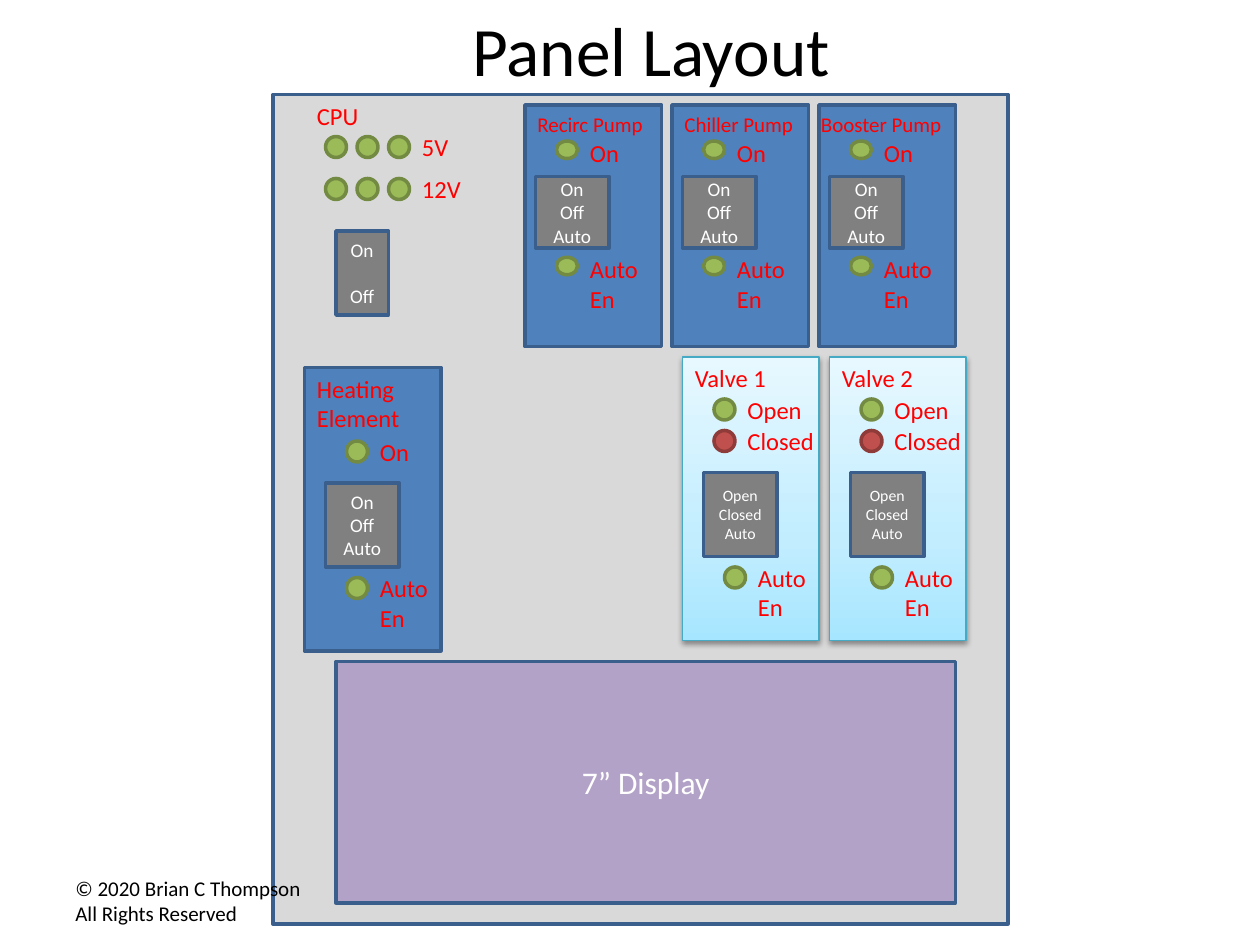
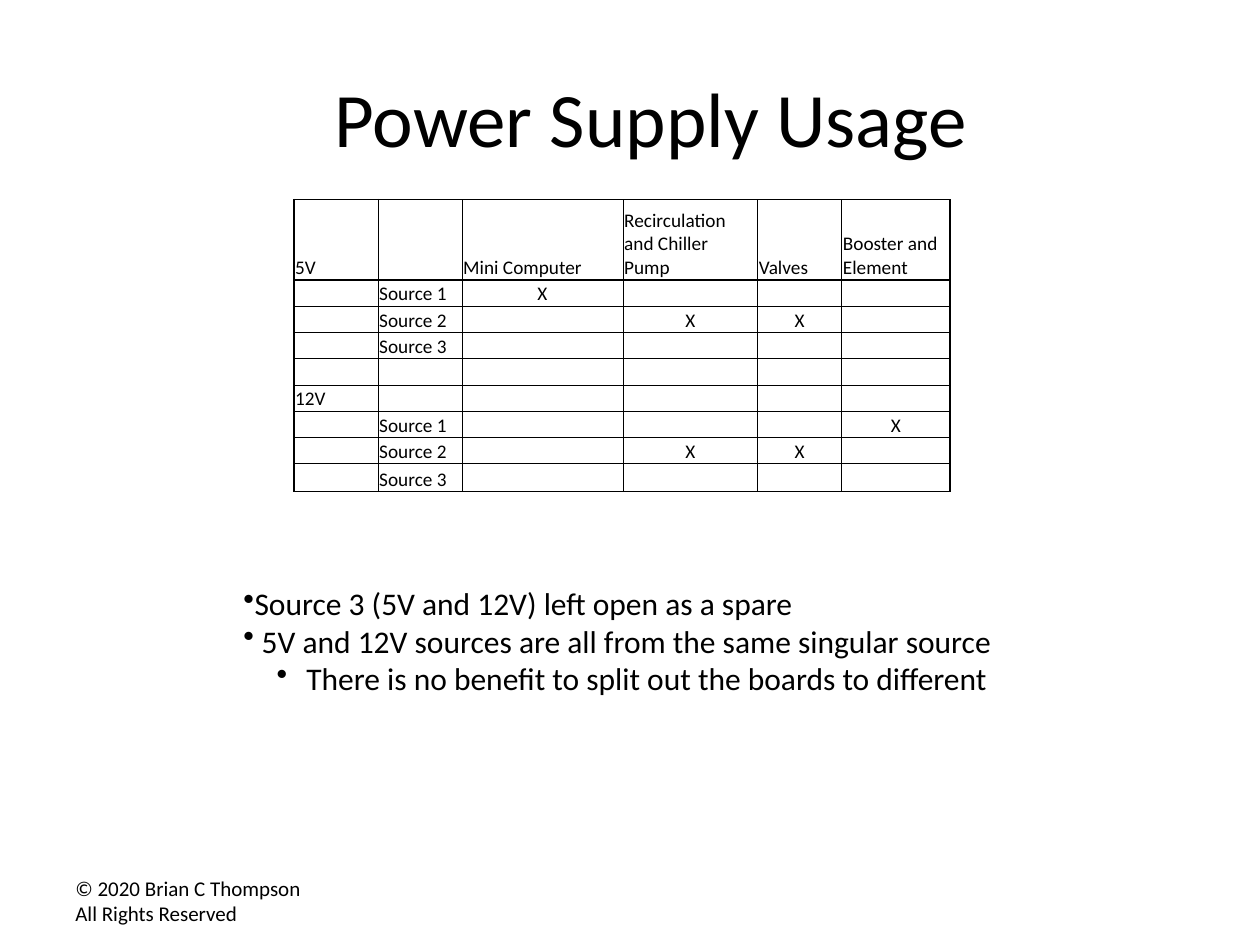
from copy import deepcopy

from pptx import Presentation
from pptx import util as u
from pptx.dml.color import RGBColor
from pptx.enum import shapes, text
from pptx.oxml import parse_xml
from pptx.oxml.ns import nsdecls, qn

Pt = u.Pt
rgb = RGBColor.from_string
RECT, OVAL = shapes.MSO_SHAPE.RECTANGLE, shapes.MSO_SHAPE.OVAL
LEFT, CENTER = text.PP_ALIGN.LEFT, text.PP_ALIGN.CENTER
TOP, MIDDLE = text.MSO_ANCHOR.TOP, text.MSO_ANCHOR.MIDDLE
FONT = "Calibri"
BLACK, WHITE, RED_TEXT = "000000", "FFFFFF", "FF0000"
BLUE, NAVY, GREY, PANEL, PURPLE = "4F81BD", "3A5F8C", "808080", "D9D9D9", "B3A2C7"
GREEN_LED, RED_LED = ("9BBB59", "738A42"), ("C0504D", "8E3B39")
GLASS = [("A7E6FF", 0), ("C1EDFF", 0.35), ("E7F8FF", 1)]
GLASS_EDGE = "46AAC5"


def write(parent, at, lines, size=14, color=RED_TEXT, align=LEFT, anchor=TOP, sp=None):
    """Put lines in the given shape, or in a new text box at the given place."""
    if sp is None:
        sp = parent.add_textbox(*map(Pt, at))
    tf = sp.text_frame
    tf.word_wrap = True
    tf.vertical_anchor = anchor
    tf.text = "\n".join(lines)
    for p in tf.paragraphs:
        p.alignment = align
        for r in p.runs:
            r.font.name, r.font.size = FONT, Pt(size)
            r.font.color.rgb = rgb(color)
    return sp


def draw(parent, kind, at, fill, line, lines=(), size=11):
    """Add a filled, outlined shape with optional centred white text."""
    sp = parent.add_shape(kind, *map(Pt, at))
    sp.shadow.inherit = False
    sp.fill.solid()
    sp.fill.fore_color.rgb = rgb(fill)
    sp.line.color.rgb = rgb(line)
    sp.line.width = Pt(2)
    if lines:
        write(parent, at, lines, size, WHITE, CENTER, MIDDLE, sp)
    return sp


prs = Presentation()
prs.slide_width, prs.slide_height = Pt(720), Pt(540)
slides = []
for title, top, height, size in [("Panel Layout", 0, 56, 39.6),
                                 ("Power Supply Usage", 21.6, 90, 44)]:
    s = prs.slides.add_slide(prs.slide_layouts[6])
    write(s.shapes, (90, top, 564, height), [title], size, BLACK, CENTER, MIDDLE)
    slides.append(s)

# Slide 1: enclosure
s = slides[0]
draw(s.shapes, RECT, (156, 54, 420, 474), PANEL, NAVY)

# Computer supply indicators and power switch
for row, volts in enumerate(["5V", "12V"]):
    for col in range(3):
        draw(s.shapes, OVAL, (186 + 18 * col, 78 + 24 * row, 12, 12), *GREEN_LED)
    write(s.shapes, (234, 72 + 24 * row, 48, 24), [volts])
write(s.shapes, (174, 54, 48, 24), ["CPU"])
power = draw(s.shapes, RECT, (192, 132, 30, 48), GREY, NAVY, ["On", "Off"])
power.text_frame.paragraphs[1].space_before = Pt(13.4)

# Control units; every place inside one is an offset from its top left corner
ON_OFF = ["On", "Off", "Auto"]
AUTO = ["Auto", "En"]
units = []
for i, name in enumerate(["Recirc Pump", "Chiller Pump", "Booster Pump"]):
    shift = 6 if name == "Booster Pump" else 0
    units.append(dict(
        at=(300 + 84 * i, 60, 78, 138), glass=False,
        switch=((6, 40.8, 42, 41), ON_OFF, 11),
        leds=[((18, 20.6, 12, 10), GREEN_LED), ((18, 87, 12, 10), GREEN_LED)],
        labels=[((-shift, 0, 78 + 2 * shift, 21.6), [name], 12),
                ((30, 15.3, 48, 21), ["On"], 14), ((30, 81.8, 48, 35), AUTO, 14)]))
for i, name in enumerate(["Valve 1", "Valve 2"]):
    units.append(dict(
        at=(390 + 84 * i, 204, 78, 162), glass=True,
        switch=((12, 66, 42, 48), ["Open", "Closed", "Auto"], 9),
        leds=[((18, 24, 12, 12), GREEN_LED), ((18, 42, 12, 12), RED_LED),
              ((24, 120, 12, 12), GREEN_LED)],
        labels=[((0, 0, 60, 24), [name], 14), ((30, 18, 48, 24), ["Open"], 14),
                ((30, 36, 54, 24), ["Closed"], 14), ((36, 114, 48, 41), AUTO, 14)]))
units.append(dict(
    at=(174, 210, 78, 162), glass=False,
    switch=((12, 66, 42, 48), ON_OFF, 11),
    leds=[((24, 42, 12, 12), GREEN_LED), ((24, 120, 12, 12), GREEN_LED)],
    labels=[((0, 0, 78, 41), ["Heating", "Element"], 14),
            ((36, 36, 48, 24), ["On"], 14), ((36, 114, 48, 41), AUTO, 14)]))

for unit in units:
    left, top = unit["at"][:2]
    group = s.shapes.add_group_shape().shapes
    sp = draw(group, RECT, unit["at"], BLUE, NAVY)
    if unit["glass"]:
        sp.fill.gradient()
        sp.fill.gradient_angle = 90
        stops = next(sp._element.iter(qn("a:gsLst")))
        stops.insert(1, deepcopy(stops[0]))
        for stop, (color, position) in zip(sp.fill.gradient_stops, GLASS):
            stop.color.rgb = rgb(color)
            stop.position = position
        sp.line.color.rgb = rgb(GLASS_EDGE)
        sp.line.width = Pt(0.75)
        next(sp._element.iter(qn("a:effectLst"))).append(parse_xml(
            f'<a:outerShdw {nsdecls("a")} blurRad="40000" dist="20000" dir="5400000" '
            'rotWithShape="0"><a:srgbClr val="000000"><a:alpha val="38000"/>'
            '</a:srgbClr></a:outerShdw>'))
    (x, y, w, h), words, size = unit["switch"]
    draw(group, RECT, (left + x, top + y, w, h), GREY, NAVY, words, size)
    for (x, y, w, h), colors in unit["leds"]:
        draw(group, OVAL, (left + x, top + y, w, h), *colors)
    for (x, y, w, h), words, size in unit["labels"]:
        write(group, (left + x, top + y, w, h), words, size)

draw(s.shapes, RECT, (192, 378, 354, 138), PURPLE, NAVY, ["7” Display"], 18)

# Slide 2: which source feeds which load
s = slides[1]
rows = [
    ["5V", "", "Mini Computer", "Recirculation and Chiller Pump", "Valves",
     "Booster and Element"],
    ["", "Source 1", "X", "", "", ""],
    ["", "Source 2", "", "X", "X", ""],
    ["", "Source 3", "", "", "", ""],
    ["", "", "", "", "", ""],
    ["12V", "", "", "", "", ""],
    ["", "Source 1", "", "", "", "X"],
    ["", "Source 2", "", "X", "X", ""],
    ["", "Source 3", "", "", "", ""],
]
widths = [48, 48, 92, 77, 48, 62]
heights = [46] + [15] * 7 + [16]
last_row, last_col = len(rows) - 1, len(widths) - 1
table = s.shapes.add_table(len(rows), len(widths), Pt(168), Pt(114),
                           Pt(sum(widths)), Pt(sum(heights))).table
table.first_row = table.horz_banding = False
for column, width in zip(table.columns, widths):
    column.width = Pt(width)
for i, (row, height) in enumerate(zip(rows, heights)):
    table.rows[i].height = Pt(height)
    for j, value in enumerate(row):
        cell = table.cell(i, j)
        cell.margin_left = cell.margin_right = cell.margin_top = Pt(0.7)
        cell.margin_bottom = 0
        cell.vertical_anchor = text.MSO_ANCHOR.BOTTOM
        cell.text = value
        p = cell.text_frame.paragraphs[0]
        p.alignment = CENTER if value == "X" else LEFT
        for r in p.runs:
            r.font.name, r.font.size = FONT, Pt(11)
            r.font.color.rgb = rgb(BLACK)
        if not value:
            p._p.get_or_add_endParaRPr().set("sz", "1100")
        thick = {"L": j == 0, "R": j == last_col,
                 "T": i == 1 or (i == 0 and j < 2), "B": i in (0, last_row)}
        for side, is_thick in thick.items():
            cell._tc.get_or_add_tcPr().append(parse_xml(
                f'<a:ln{side} {nsdecls("a")} w="{Pt(1 if is_thick else 0.5)}">'
                f'<a:solidFill><a:srgbClr val="{BLACK}"/></a:solidFill></a:ln{side}>'))
        cell.fill.background()

notes = write(s.shapes, (132, 330, 463, 73), [
    "Source 3 (5V and 12V) left open as a spare",
    " 5V and 12V sources are all from the same singular source",
    "There is no benefit to split out the boards to different"], 18, BLACK)
for p, (margin, indent) in zip(notes.text_frame.paragraphs, [(0, 0), (0, 0), (36, -17)]):
    pPr = p._p.get_or_add_pPr()
    pPr.set("marL", str(Pt(margin)))
    pPr.set("indent", str(Pt(indent)))
    pPr.append(parse_xml(f'<a:buChar {nsdecls("a")} char="•"/>'))
notes.text_frame.paragraphs[2].level = 1

# Footer on top of everything
for s in slides:
    write(s.shapes, (36, 500.4, 168, 28.8),
          ["© 2020 Brian C Thompson", "All Rights Reserved"], 12, BLACK, anchor=MIDDLE)

prs.save("out.pptx")
